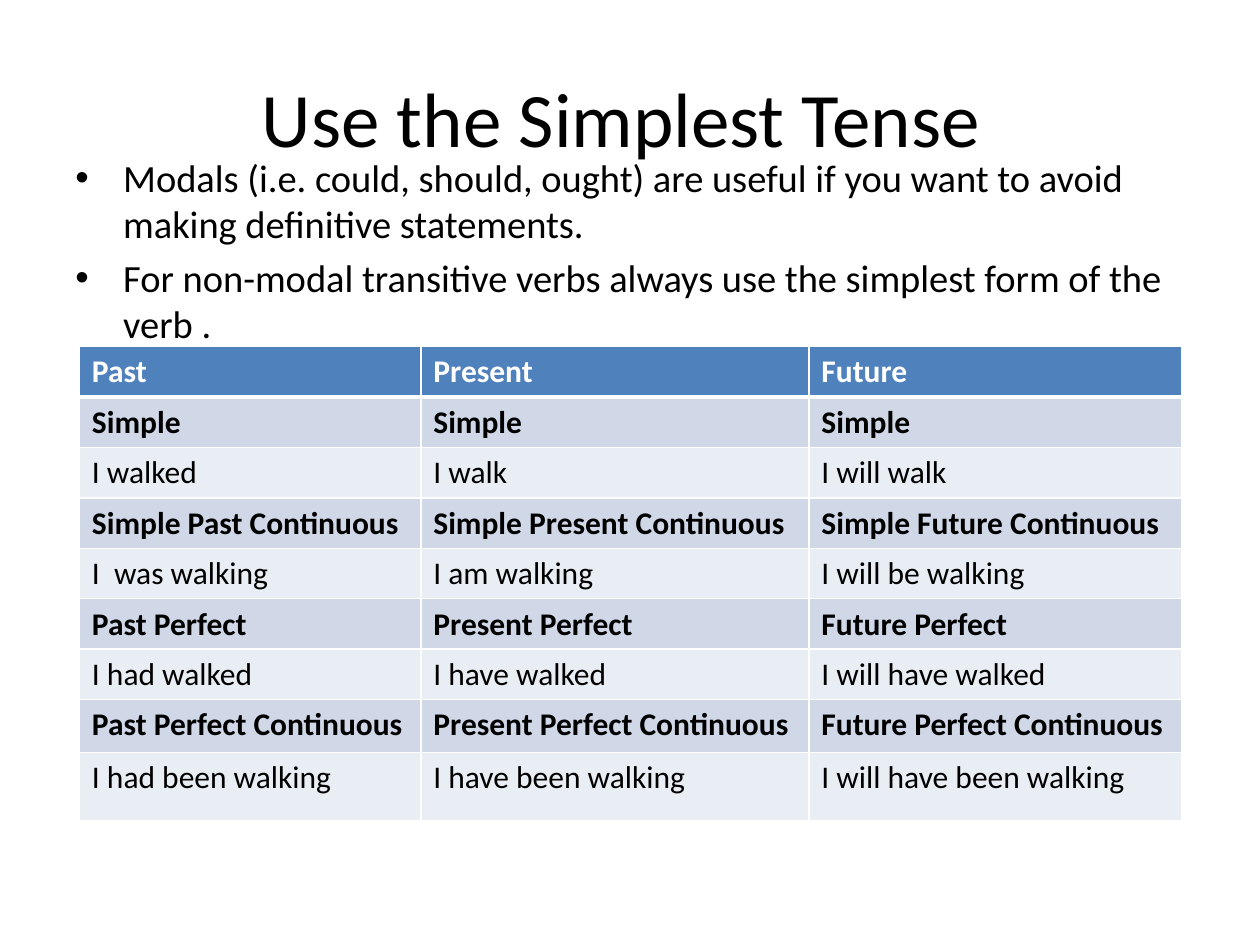
from pptx import Presentation
from pptx.dml.color import RGBColor
from pptx.enum import text
from pptx.oxml import parse_xml
from pptx.oxml.ns import nsdecls
from pptx.util import Inches, Pt

TITLE = "Use the Simplest Tense "
BULLETS = [
    "Modals (i.e. could, should, ought) are useful if you want to avoid making definitive statements.",
    "For non-modal transitive verbs always use the simplest form of the verb .",
]
TENSES = [
    ("Past", "Present", "Future"),
    ("Simple", "Simple", "Simple"),
    ("I walked", "I walk", "I will walk"),
    ("Simple Past Continuous", "Simple Present Continuous", "Simple Future Continuous"),
    ("I  was walking", "I am walking", "I will be walking"),
    ("Past Perfect", "Present Perfect", "Future Perfect"),
    ("I had walked", "I have walked", "I will have walked"),
    ("Past Perfect Continuous", "Present Perfect Continuous", "Future Perfect Continuous"),
    ("I had been walking", "I have been walking", "I will have been walking"),
]
COLUMN_WIDTHS = [2.71, 3.08, 2.96]
ROW_HEIGHTS = [0.34, 0.34, 0.34, 0.36, 0.34, 0.34, 0.34, 0.42, 0.54]

FONT = "Calibri"
BLACK = RGBColor(0x00, 0x00, 0x00)
WHITE = RGBColor(0xFF, 0xFF, 0xFF)
HEADER_BLUE = RGBColor(0x4F, 0x81, 0xBD)
NAME_BAND = RGBColor(0xD0, 0xD8, 0xE8)
EXAMPLE_BAND = RGBColor(0xE9, 0xED, 0xF4)


def add_run(paragraph, words, size, color=BLACK, bold=False):
    run = paragraph.add_run()
    run.text = words
    run.font.name = FONT
    run.font.size = Pt(size)
    run.font.bold = bold
    run.font.color.rgb = color


def add_text_frame(slide, left, top, width, height, anchor):
    box = slide.shapes.add_textbox(Inches(left), Inches(top), Inches(width), Inches(height))
    box.text_frame.word_wrap = True
    box.text_frame.vertical_anchor = anchor
    return box.text_frame


def set_bullet(paragraph):
    properties = paragraph._p.get_or_add_pPr()
    properties.set("marL", str(Inches(0.38)))
    properties.set("indent", str(Inches(-0.38)))
    properties.append(parse_xml(f'<a:buFont {nsdecls("a")} typeface="Arial"/>'))
    properties.append(parse_xml(f'<a:buChar {nsdecls("a")} char="•"/>'))


def set_borders(cell, bottom_width):
    properties = cell._tc.get_or_add_tcPr()
    widths = {"lnL": 1, "lnR": 1, "lnT": 1, "lnB": bottom_width}
    for position, (side, width) in enumerate(widths.items()):
        properties.insert(position, parse_xml(
            f'<a:{side} {nsdecls("a")} w="{Pt(width)}"><a:solidFill>'
            f'<a:srgbClr val="{WHITE}"/></a:solidFill></a:{side}>'))


def add_tense_table(slide):
    table = slide.shapes.add_table(
        len(TENSES), len(COLUMN_WIDTHS), Inches(0.63), Inches(2.75),
        Inches(sum(COLUMN_WIDTHS)), Inches(sum(ROW_HEIGHTS))).table
    for column, width in zip(table.columns, COLUMN_WIDTHS):
        column.width = Inches(width)
    for row_index, (row, height) in enumerate(zip(table.rows, ROW_HEIGHTS)):
        row.height = Inches(height)
        header = row_index == 0
        tense_name = row_index % 2 == 1
        band = HEADER_BLUE if header else NAME_BAND if tense_name else EXAMPLE_BAND
        for cell, words in zip(row.cells, TENSES[row_index]):
            cell.fill.solid()
            cell.fill.fore_color.rgb = band
            set_borders(cell, 3 if header else 1)
            add_run(cell.text_frame.paragraphs[0], words, 18,
                    WHITE if header else BLACK, header or tense_name)
            if row_index == 1:
                cell._tc.tcPr.find(
                    "{http://schemas.openxmlformats.org/drawingml/2006/main}lnT").set("w", str(Pt(3)))


def main():
    presentation = Presentation()
    presentation.slide_width = Inches(10)
    presentation.slide_height = Inches(7.5)
    slide = presentation.slides.add_slide(presentation.slide_layouts[6])

    title = add_text_frame(slide, 0.5, 0.3, 9, 1.25, text.MSO_ANCHOR.MIDDLE).paragraphs[0]
    title.alignment = text.PP_ALIGN.CENTER
    add_run(title, TITLE, 44)

    body = add_text_frame(slide, 0.5, 1.17, 9, 4.95, text.MSO_ANCHOR.TOP)
    for index, words in enumerate(BULLETS):
        paragraph = body.add_paragraph() if index else body.paragraphs[0]
        paragraph.space_before = Pt(4.4)
        set_bullet(paragraph)
        add_run(paragraph, words, 22)

    add_tense_table(slide)
    presentation.save("out.pptx")


if __name__ == "__main__":
    main()
